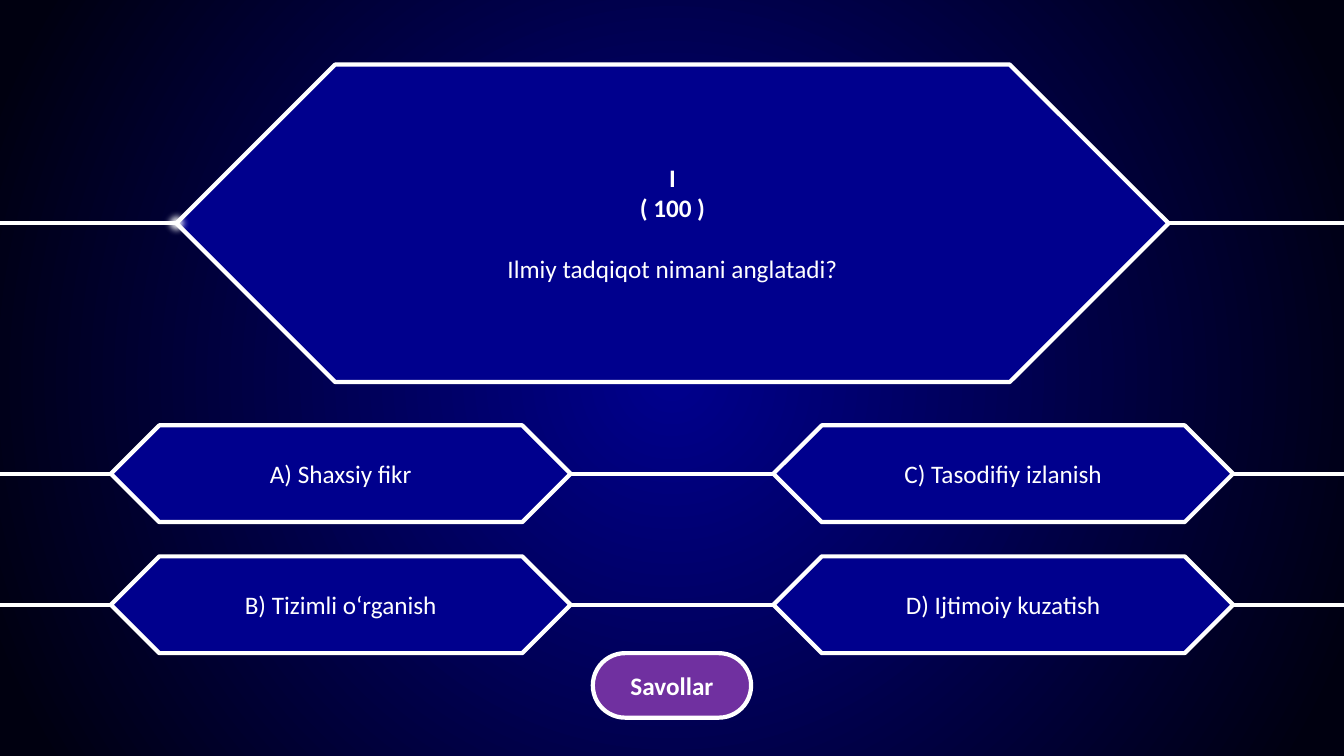
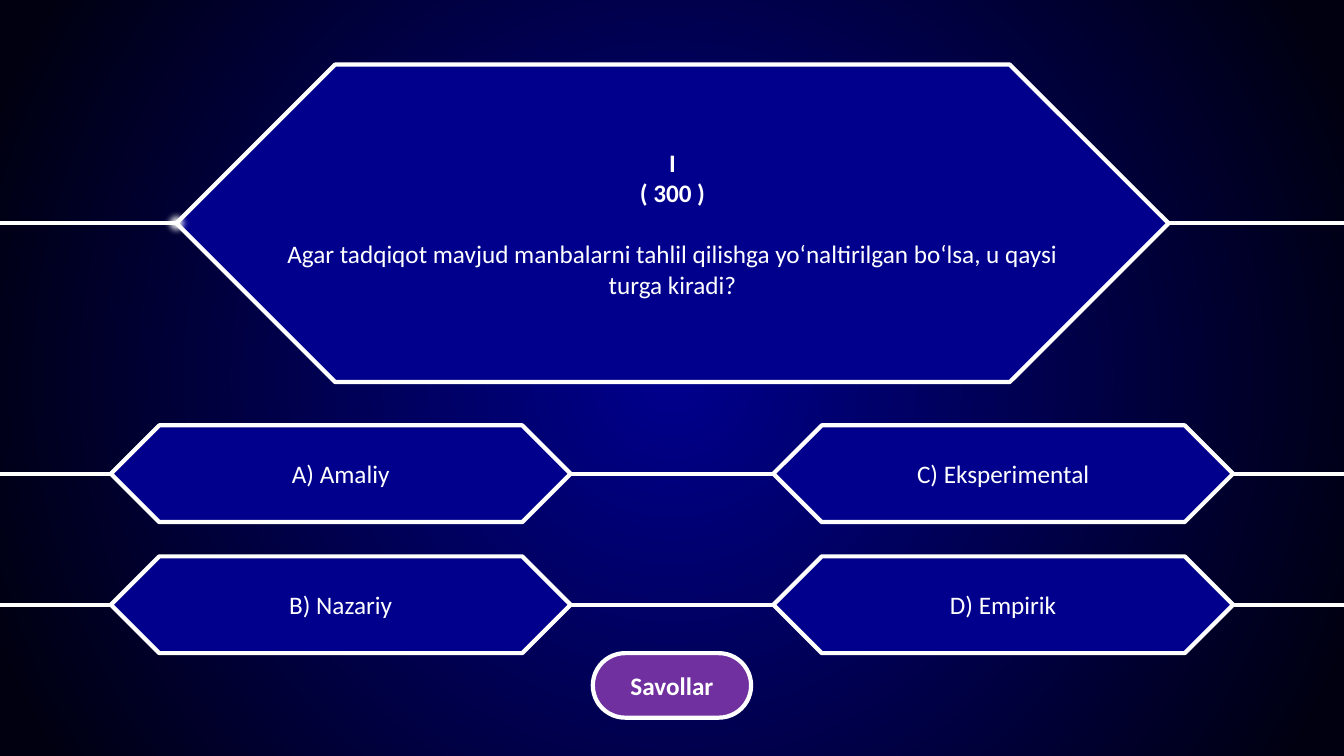
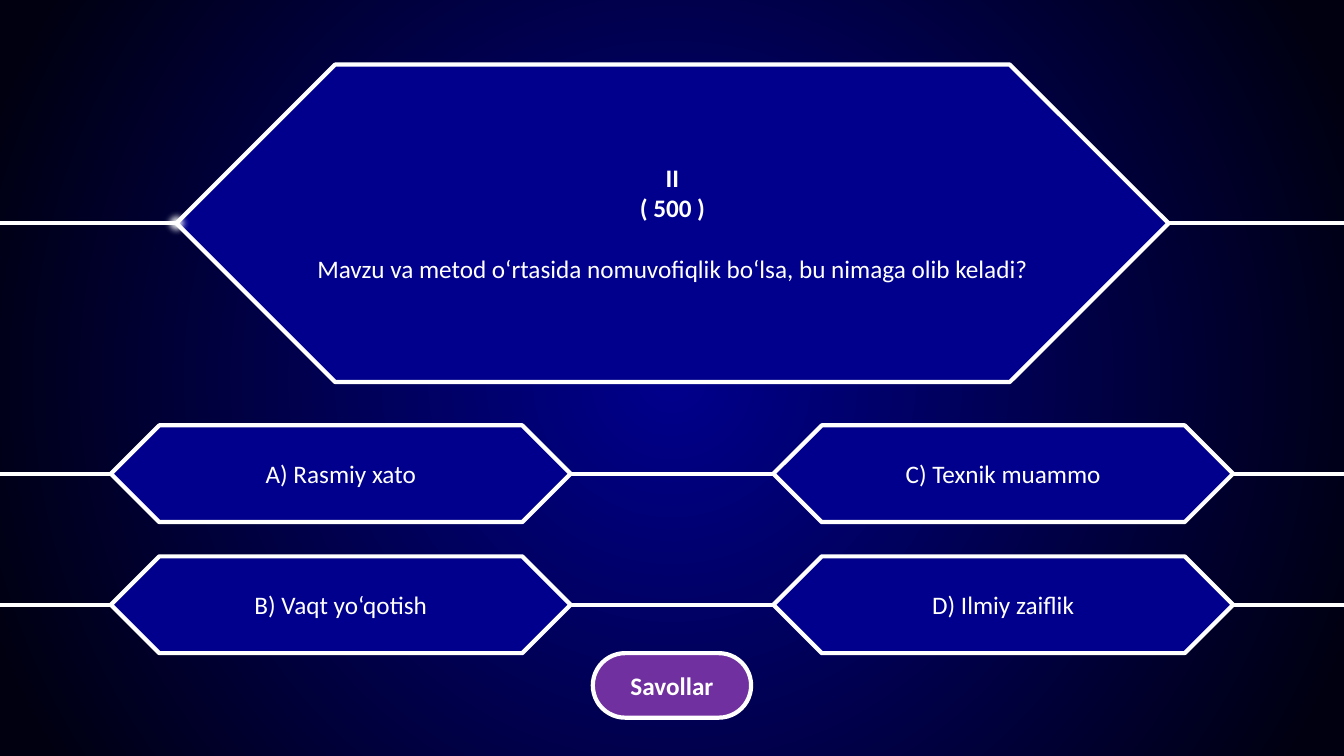
"""Builds three quiz slides with a question, four answers and a return button."""
from dataclasses import dataclass

from lxml.etree import SubElement
from pptx import Presentation
from pptx.dml.color import RGBColor
from pptx.enum.shapes import MSO_CONNECTOR, MSO_SHAPE
from pptx.enum.text import MSO_ANCHOR, PP_ALIGN
from pptx.oxml.ns import qn
from pptx.presentation import Presentation as Deck
from pptx.shapes.autoshape import Shape
from pptx.slide import Slide
from pptx.util import Inches, Pt

COLORS = {
    "panel": "00008D",
    "night": "000010",
    "white": "FFFFFF",
    "button": "7030A0",
    "spark_edge": "325491",
}
FONT = "Calibri"
TEXT_SIZE = 18
BLANK_LINE = 22
SLIDE_WIDTH, SLIDE_HEIGHT = 13.33, 7.5


@dataclass(frozen=True)
class Box:
    left: float
    top: float
    width: float
    height: float

    @property
    def middle(self) -> float:
        return self.top + self.height / 2


@dataclass(frozen=True)
class Line:
    text: str
    bold: bool = False
    space_before: float = 0


@dataclass(frozen=True)
class Spark:
    diameter: float
    blur: float


@dataclass(frozen=True)
class Quiz:
    round_name: str
    points: int
    question: str
    answers: tuple[str, str, str, str]


QUESTION_BOX = Box(1.75, 0.64, 9.84, 3.15)
BUTTON_BOX = Box(5.88, 6.48, 1.57, 0.64)
ANSWER_BOXES = [Box(left, top, 4.56, 0.96) for left in (1.1, 7.67) for top in (4.22, 5.52)]
SPARKS = [Spark(0.3, 5), Spark(0.1, 2.5)]

QUIZZES = [
    Quiz("I", 100, "Ilmiy tadqiqot nimani anglatadi?",
         ("A) Shaxsiy fikr", "B) Tizimli o‘rganish",
          "C) Tasodifiy izlanish", "D) Ijtimoiy kuzatish")),
    Quiz("I", 300,
         "Agar tadqiqot mavjud manbalarni tahlil qilishga yo‘naltirilgan bo‘lsa, "
         "u qaysi turga kiradi?",
         ("A) Amaliy", "B) Nazariy", "C) Eksperimental", "D) Empirik")),
    Quiz("II", 500, "Mavzu va metod o‘rtasida nomuvofiqlik bo‘lsa, bu nimaga olib keladi?",
         ("A) Rasmiy xato", "B) Vaqt yo‘qotish", "C) Texnik muammo", "D) Ilmiy zaiflik")),
]


def rgb(name: str) -> RGBColor:
    return RGBColor.from_string(COLORS[name])


def set_background(deck: Deck) -> None:
    master = deck.slide_master
    fill = master.background.fill
    fill.gradient()
    for stop, name, position in zip(fill.gradient_stops, ("panel", "night"), (0, 0.95)):
        stop.color.rgb = rgb(name)
        stop.position = position
    gradient = master.element.find(".//" + qn("p:bgPr")).find(qn("a:gradFill"))
    gradient.remove(gradient.find(qn("a:lin")))
    circle = SubElement(gradient, qn("a:path"), {"path": "circle"})
    SubElement(circle, qn("a:fillToRect"), {side: "50000" for side in "ltrb"})


def add_shape(slide: Slide, preset: MSO_SHAPE, box: Box, fill: str,
              edge: str = "white", edge_width: float = 3) -> Shape:
    shape = slide.shapes.add_shape(
        preset, Inches(box.left), Inches(box.top), Inches(box.width), Inches(box.height))
    shape.shadow.inherit = False
    shape.fill.solid()
    shape.fill.fore_color.rgb = rgb(fill)
    shape.line.color.rgb = rgb(edge)
    shape.line.width = Pt(edge_width)
    for index in range(len(shape.adjustments)):
        shape.adjustments[index] = 0.5
    return shape


def write(shape: Shape, lines: list[Line]) -> None:
    frame = shape.text_frame
    frame.word_wrap = True
    frame.vertical_anchor = MSO_ANCHOR.MIDDLE
    for index, line in enumerate(lines):
        paragraph = frame.add_paragraph() if index else frame.paragraphs[0]
        paragraph.text = line.text
        paragraph.alignment = PP_ALIGN.CENTER
        if line.space_before:
            paragraph.space_before = Pt(line.space_before)
        paragraph.font.name = FONT
        paragraph.font.size = Pt(TEXT_SIZE)
        paragraph.font.bold = line.bold
        paragraph.font.color.rgb = rgb("white")


def add_panel(slide: Slide, box: Box, lines: list[Line]) -> None:
    write(add_shape(slide, MSO_SHAPE.SNIP_2_DIAG_RECTANGLE, box, "panel"), lines)


def add_rail(slide: Slide, height: float) -> None:
    rail = slide.shapes.add_connector(
        MSO_CONNECTOR.STRAIGHT, Inches(SLIDE_WIDTH), Inches(height), Inches(0), Inches(height))
    rail.line.color.rgb = rgb("white")
    rail.line.width = Pt(3)
    SubElement(rail.element.spPr, qn("a:effectLst"))


def add_spark(slide: Slide, spark: Spark) -> None:
    radius = spark.diameter / 2
    box = Box(QUESTION_BOX.left - radius, QUESTION_BOX.middle - radius,
              spark.diameter, spark.diameter)
    glow = add_shape(slide, MSO_SHAPE.OVAL, box, "white", "spark_edge", 1)
    effects = glow.element.spPr.find(qn("a:effectLst"))
    SubElement(effects, qn("a:softEdge"), {"rad": str(Pt(spark.blur))})


def add_quiz(deck: Deck, quiz: Quiz) -> None:
    slide = deck.slides.add_slide(deck.slide_layouts[6])
    for height in sorted({box.middle for box in ANSWER_BOXES}):
        add_rail(slide, height)
    for box, answer in zip(ANSWER_BOXES, quiz.answers):
        add_panel(slide, box, [Line(answer)])
    add_rail(slide, QUESTION_BOX.middle)
    add_panel(slide, QUESTION_BOX, [
        Line(quiz.round_name, bold=True),
        Line(f"( {quiz.points} )", bold=True),
        Line(quiz.question, space_before=BLANK_LINE),
    ])
    for spark in SPARKS:
        add_spark(slide, spark)
    button = add_shape(slide, MSO_SHAPE.ROUNDED_RECTANGLE, BUTTON_BOX, "button")
    write(button, [Line("Savollar", bold=True)])


def main() -> None:
    deck = Presentation()
    deck.slide_width = Inches(SLIDE_WIDTH)
    deck.slide_height = Inches(SLIDE_HEIGHT)
    set_background(deck)
    for quiz in QUIZZES:
        add_quiz(deck, quiz)
    deck.save("out.pptx")


if __name__ == "__main__":
    main()
